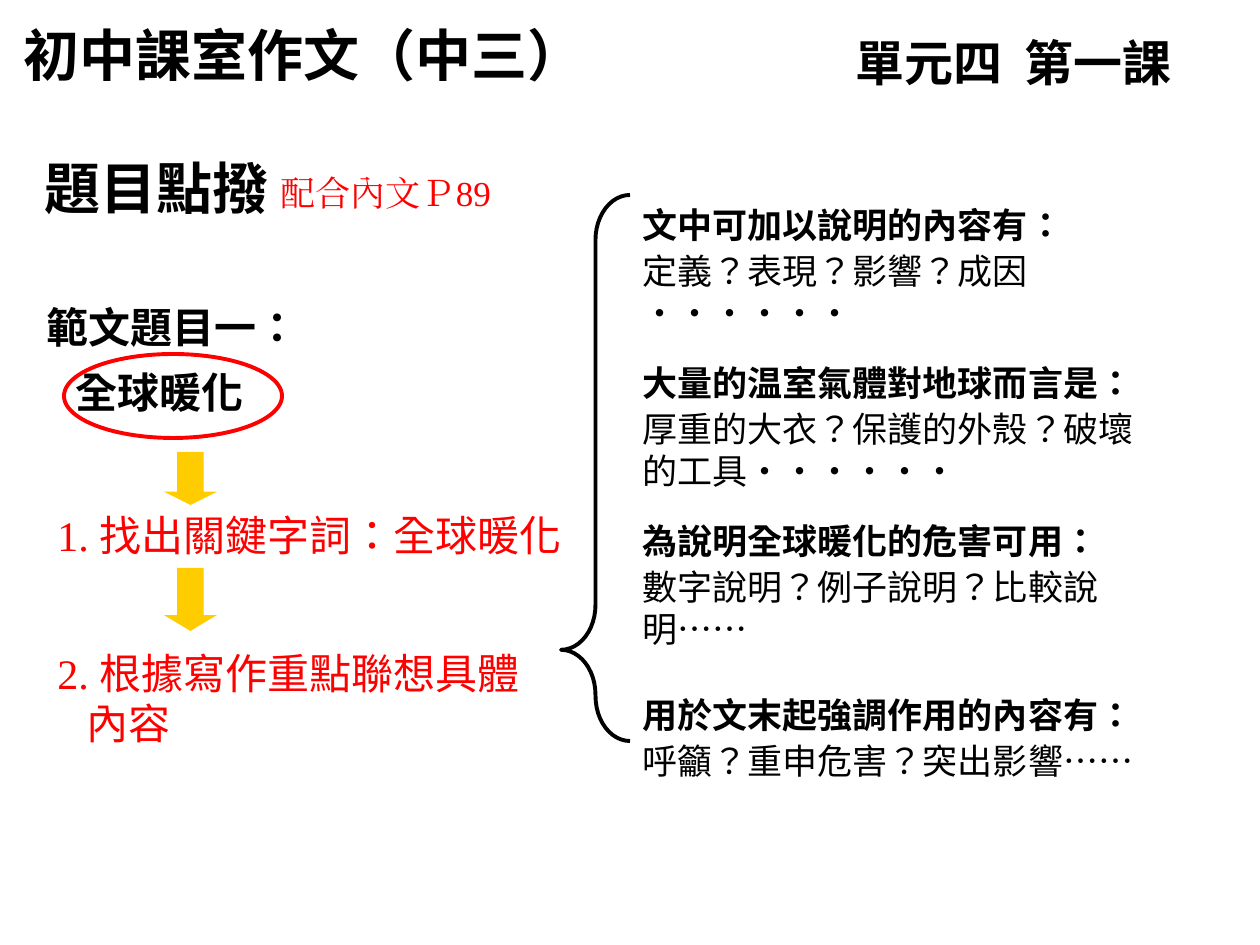
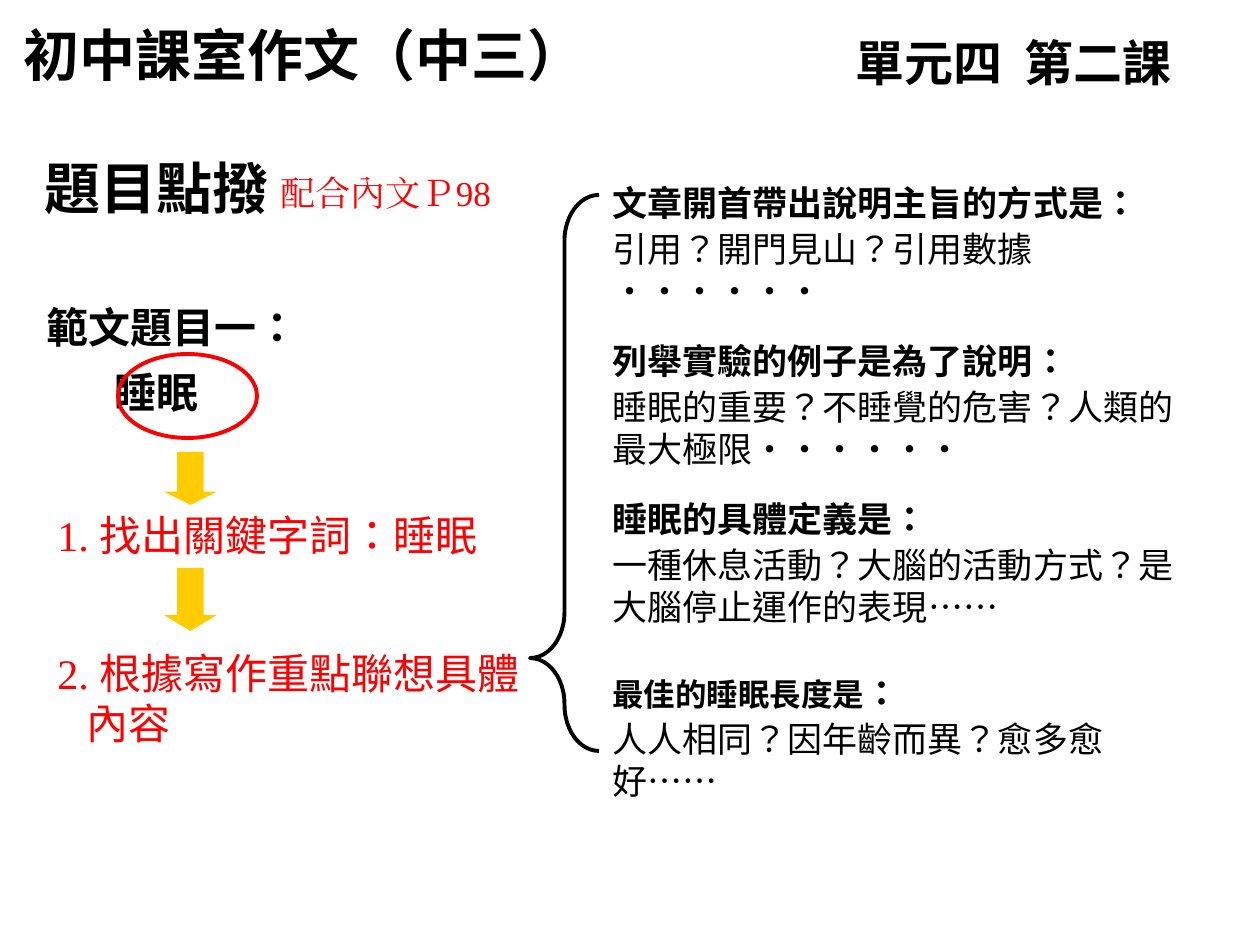
from lxml import etree
from pptx import Presentation
from pptx.dml.color import RGBColor
from pptx.enum.lang import MSO_LANGUAGE_ID
from pptx.enum.shapes import MSO_SHAPE
from pptx.enum.text import MSO_AUTO_SIZE
from pptx.oxml.ns import qn
from pptx.util import Emu, Pt

ELLIPSE = MSO_SHAPE.OVAL
DOWN_ARROW = MSO_SHAPE.DOWN_ARROW
LEFT_BRACE = MSO_SHAPE.LEFT_BRACE
FIT_TEXT = MSO_AUTO_SIZE.SHAPE_TO_FIT_TEXT
CHINESE = MSO_LANGUAGE_ID.TRADITIONAL_CHINESE

EMU_PER_PX = 914400 / 126
BLACK, RED, GOLD = "000000", "FF0000", "FFCC00"
SANS, SERIF, TITLE_FONT = "DejaVu Sans", "Times New Roman", "Lato"
HEADING_FONT, DOTS_FONT = "Arial", "Noto Sans CJK SC"
MID_DOTS, ELLIPSIS = "······", "……"
NOTE_GAPS = (0, 16, 16, 25)

LESSONS = [
    {
        "lesson": "第一課", "page_number": "89",
        "keyword": "全球暖化", "keyword_indent": 29,
        "ring": (64, 354, 218, 84),
        "brace": (561, 195, 69, 546), "brace_curve": 0.652,
        "notes_place": (630, 197, 546, 553),
        "notes": [
            ([("文中可加以說明的內容有：", 20, SANS)],
             "定義？表現？影響？成因", MID_DOTS),
            ([("大量的温室氣體對地球而言是：", 20, SANS)],
             "厚重的大衣？保護的外殼？破壞的工具", MID_DOTS),
            ([("為說明全球暖化的危害可用：", 20, SANS)],
             "數字說明？例子說明？比較說明", ELLIPSIS),
            ([("用於文末起強調作用的內容有：", 20, SANS)],
             "呼籲？重申危害？突出影響", ELLIPSIS),
        ],
    },
    {
        "lesson": "第二課", "page_number": "98",
        "keyword": "睡眠", "keyword_indent": 68,
        "ring": (118, 354, 139, 84),
        "brace": (530, 195, 69, 556), "brace_curve": 0.664,
        "notes_place": (600, 175, 586, 596),
        "notes": [
            ([("文章開首帶出說明主旨的方式是：", 20, SANS)],
             "引用？開門見山？引用數據", MID_DOTS),
            ([("列舉實驗的例子是為了說明：", 20, SANS)],
             "睡眠的重要？不睡覺的危害？人類的最大極限", MID_DOTS),
            ([("睡眠的具體定義是：", 20, SANS)],
             "一種休息活動？大腦的活動方式？是大腦停止運作的表現", ELLIPSIS),
            ([("最佳的睡眠長度是", 18, HEADING_FONT), ("：", 20, SANS)],
             "人人相同？因年齡而異？愈多愈好", ELLIPSIS),
        ],
    },
]


def px(length):
    return Emu(round(length * EMU_PER_PX))


def color(hex_string):
    return RGBColor.from_string(hex_string)


def add_box(page, place):
    box = page.shapes.add_textbox(*map(px, place))
    box.text_frame.word_wrap = True
    box.text_frame.auto_size = FIT_TEXT
    return box.text_frame


def add_para(frame, first=False, before=0, spacing=None, indent=0):
    para = frame.paragraphs[0] if first else frame.add_paragraph()
    para.space_before = Pt(before)
    if spacing:
        para.line_spacing = spacing
    if indent:
        para._p.get_or_add_pPr().set("marL", str(px(indent)))
    return para


def add_span(para, text, size, font, fill=BLACK, bold=False):
    span = para.add_run()
    span.text = text
    span.font.size = Pt(size)
    span.font.bold = bold
    span.font.name = font
    span.font.color.rgb = color(fill)
    span.font.language_id = CHINESE
    east_asian = etree.SubElement(span._r.get_or_add_rPr(), qn("a:ea"))
    east_asian.set("typeface", font)


def add_label(page, place, text, size, font, fill=BLACK, bold=True):
    """Add a box that holds one paragraph in one style."""
    para = add_para(add_box(page, place), first=True)
    add_span(para, text, size, font, fill, bold)
    return para


def add_tab(para, position):
    tabs = etree.SubElement(para._p.get_or_add_pPr(), qn("a:tabLst"))
    etree.SubElement(tabs, qn("a:tab"), pos=str(px(position)), algn="l")


def add_figure(page, kind, place, fill=None, line=None, adjustments=()):
    figure = page.shapes.add_shape(kind, *map(px, place))
    figure.shadow.inherit = False
    for index, value in enumerate(adjustments):
        figure.adjustments[index] = value
    if fill:
        figure.fill.solid()
        figure.fill.fore_color.rgb = color(fill)
    else:
        figure.fill.background()
    if line:
        figure.line.color.rgb = color(line)
        figure.line.width = Pt(2.25)
    else:
        figure.line.fill.background()


def add_header(page, lesson, page_number):
    add_label(page, (11, 14, 658, 79), "初中課室作文（中三）", 32, TITLE_FONT)
    add_label(page, (32, 147, 388, 79), "題目點撥", 32, HEADING_FONT)
    unit = add_label(page, (843, 26, 417, 72), f"單元四\t{lesson}", 28, TITLE_FONT)
    add_tab(unit, 169)
    add_label(page, (268, 165, 311, 54), f"配合內文Ｐ{page_number}", 20, SERIF,
              RED, bold=False)


def add_topic(page, keyword, indent, ring):
    frame = add_box(page, (34, 280, 630, 144))
    add_span(add_para(frame, first=True, spacing=1.3), "範文題目一：", 24, SANS, bold=True)
    add_span(add_para(frame, spacing=1.3, indent=indent), keyword, 24, SANS, bold=True)
    add_figure(page, ELLIPSE, ring, line=RED)


def add_step(page, place, number, text, continuation=None):
    frame = add_box(page, place)
    para = add_para(frame, first=True)
    add_span(para, f"{number}. ", 24, SERIF, RED)
    add_span(para, text, 24, SANS, RED)
    if continuation:
        add_span(add_para(frame, indent=29), continuation, 24, SANS, RED)


def add_steps(page, keyword):
    add_figure(page, DOWN_ARROW, (164, 452, 53, 53), GOLD, adjustments=(0.25, 0.5)[::-1])
    add_step(page, (45, 503, 575, 63), 1, f"找出關鍵字詞：{keyword}")
    add_figure(page, DOWN_ARROW, (164, 568, 53, 63), GOLD, adjustments=(0.5, 0.3))
    add_step(page, (45, 641, 525, 113), 2, "根據寫作重點聯想具體", "內容")


def add_notes(page, place, notes):
    frame = add_box(page, place)
    for index, (question, answer, trail) in enumerate(notes):
        para = add_para(frame, first=index == 0, before=NOTE_GAPS[index])
        for text, size, font in question:
            add_span(para, text, size, font, bold=True)
        para = add_para(frame, before=2.3)
        add_span(para, answer, 20, SANS)
        add_span(para, trail, 20, DOTS_FONT)


def add_lesson_page(deck, content):
    page = deck.slides.add_slide(deck.slide_layouts[6])
    add_topic(page, content["keyword"], content["keyword_indent"], content["ring"])
    add_steps(page, content["keyword"])
    add_figure(page, LEFT_BRACE, content["brace"], line=BLACK,
               adjustments=(content["brace_curve"], 0.833))
    add_notes(page, content["notes_place"], content["notes"])
    add_header(page, content["lesson"], content["page_number"])


def main():
    deck = Presentation()
    deck.slide_width, deck.slide_height = px(1260), px(945)
    for content in LESSONS:
        add_lesson_page(deck, content)
    deck.save("out.pptx")


if __name__ == "__main__":
    main()
